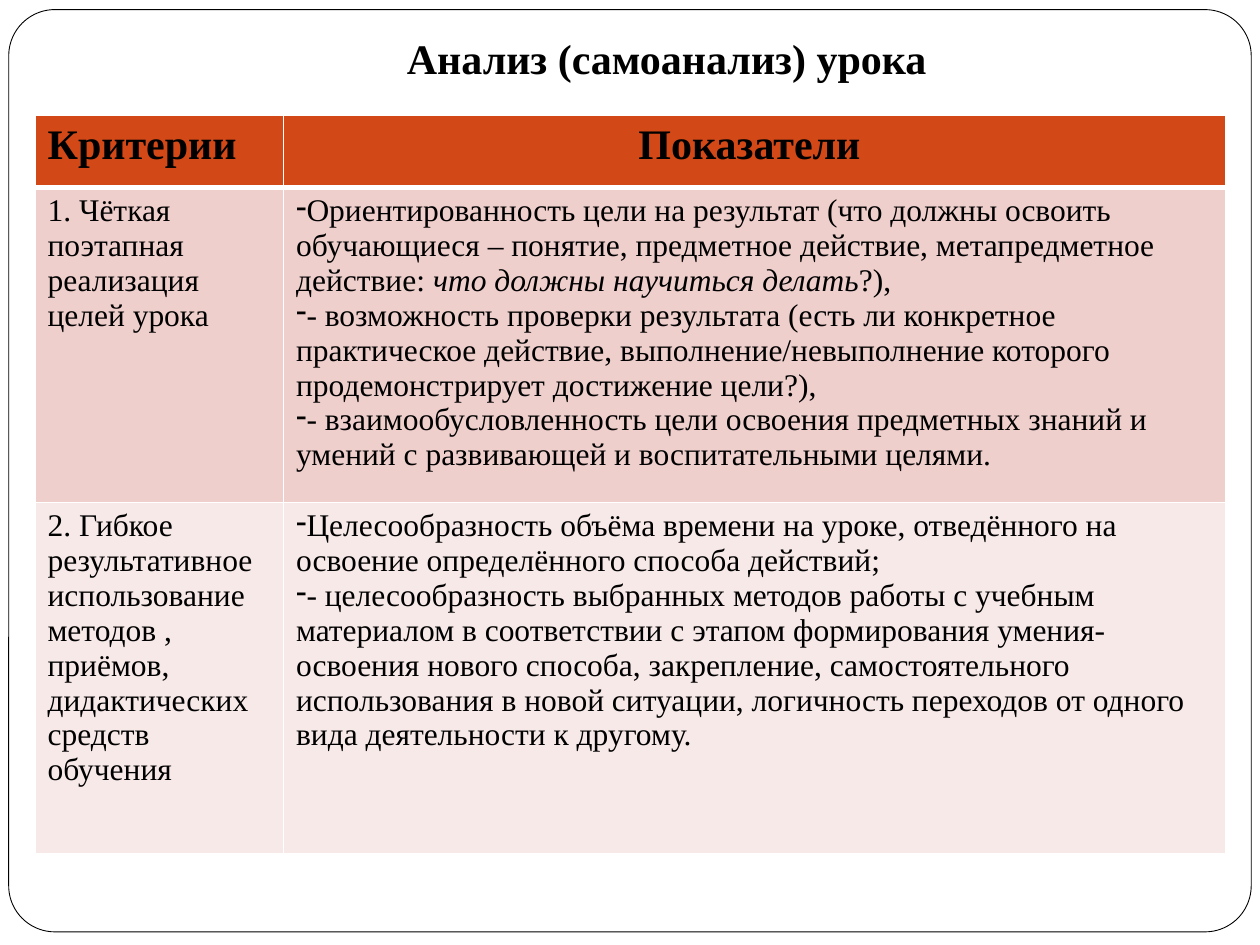
from lxml import etree
from pptx import Presentation
from pptx.dml.color import RGBColor
from pptx.enum.shapes import MSO_SHAPE
from pptx.enum.text import PP_ALIGN
from pptx.oxml.ns import qn
from pptx.util import Pt

ROUNDED = MSO_SHAPE.ROUNDED_RECTANGLE
LEFT, CENTER = PP_ALIGN.LEFT, PP_ALIGN.CENTER

BLACK = RGBColor(0x00, 0x00, 0x00)
WHITE = RGBColor(0xFF, 0xFF, 0xFF)
ORANGE = RGBColor(0xD3, 0x48, 0x17)
ROSE = RGBColor(0xEF, 0xCF, 0xCC)
PALE_ROSE = RGBColor(0xF7, 0xE9, 0xE8)

HEADER = ["Критерии", "Показатели "]
EMPHASIS = "что должны научиться делать"
CRITERIA = [
    ("1. Чёткая поэтапная реализация целей урока", [
        "Ориентированность цели на результат (что должны освоить обучающиеся – "
        "понятие, предметное действие, метапредметное действие: "
        f"{EMPHASIS}?),",
        "- возможность проверки результата (есть ли конкретное практическое действие, "
        "выполнение/невыполнение которого продемонстрирует достижение цели?),",
        "- взаимообусловленность цели освоения предметных знаний и умений "
        "с развивающей и воспитательными целями."]),
    ("2. Гибкое результативное использование методов , приёмов, "
     "дидактических средств обучения", [
        "Целесообразность объёма времени на уроке, отведённого на освоение "
        "определённого способа действий;",
        "- целесообразность выбранных методов работы с учебным материалом "
        "в соответствии с этапом формирования умения- освоения нового способа, "
        "закрепление, самостоятельного использования в новой ситуации, "
        "логичность переходов от одного вида деятельности к другому."]),
]


class SlideBuilder:
    font = "Times New Roman"
    heading_size = 24
    body_size = 18

    def __init__(self, slide):
        self.slide = slide

    def fill_paragraph(self, p, text, heading=False, align=LEFT):
        """Fill a paragraph, setting the emphasised phrase in italics."""
        before, phrase, after = text.partition(EMPHASIS)
        p.alignment = align
        for part in filter(None, (before, phrase, after)):
            r = p.add_run()
            r.text = part
            r.font.name = self.font
            r.font.size = Pt(self.heading_size if heading else self.body_size)
            r.font.bold = heading
            r.font.italic = part == EMPHASIS
            r.font.color.rgb = BLACK

    def dash(self, p):
        pPr = p._p.get_or_add_pPr()
        pPr.set("marL", "0")
        pPr.set("indent", "0")
        etree.SubElement(pPr, qn("a:buChar"), char="-")

    def frame(self, x, y, w, h):
        sp = self.slide.shapes.add_shape(ROUNDED, Pt(x), Pt(y), Pt(w), Pt(h))
        sp.adjustments[0] = 0.05
        sp.shadow.inherit = False
        sp.fill.solid()
        sp.fill.fore_color.rgb = WHITE
        sp.line.color.rgb = BLACK
        sp.line.width = Pt(0.5)

    def title(self, text, x, y, w, h):
        tf = self.slide.shapes.add_textbox(Pt(x), Pt(y), Pt(w), Pt(h)).text_frame
        tf.word_wrap = False
        self.fill_paragraph(tf.paragraphs[0], text, heading=True, align=CENTER)

    def table(self, x, y, widths, heights):
        shape = self.slide.shapes.add_table(
            len(heights), len(widths), Pt(x), Pt(y), Pt(sum(widths)), Pt(sum(heights)))
        table = shape.table
        for column, width in zip(table.columns, widths):
            column.width = Pt(width)
        for row, height in zip(table.rows, heights):
            row.height = Pt(height)
        return table

    def cell(self, cell, texts, fill, bottom=1, dashed=False, **style):
        tf = cell.text_frame
        for i, text in enumerate(texts):
            p = tf.add_paragraph() if i else tf.paragraphs[0]
            self.fill_paragraph(p, text, **style)
            if dashed:
                self.dash(p)
        # Borders must precede the fill in the cell properties
        tcPr = cell._tc.get_or_add_tcPr()
        for side, width in (("L", 1), ("R", 1), ("T", 1), ("B", bottom)):
            ln = etree.SubElement(tcPr, qn(f"a:ln{side}"), w=str(Pt(width)))
            solid = etree.SubElement(ln, qn("a:solidFill"))
            etree.SubElement(solid, qn("a:srgbClr"), val=str(WHITE))
        cell.fill.solid()
        cell.fill.fore_color.rgb = fill


def main():
    prs = Presentation()
    prs.slide_width, prs.slide_height = Pt(720), Pt(540)
    s = SlideBuilder(prs.slides.add_slide(prs.slide_layouts[6]))

    # Frame and title
    s.frame(5, 5.5, 710, 527)
    s.title("Анализ (самоанализ) урока", 212.5, 15, 337, 58)

    # Table header
    table = s.table(20, 66, widths=[142, 538.5], heights=[41, 180, 201])
    for col, (text, align) in enumerate(zip(HEADER, (LEFT, CENTER))):
        s.cell(table.cell(0, col), [text], ORANGE, bottom=3, heading=True, align=align)

    # Criteria with their indicators
    for row, ((criterion, indicators), fill) in enumerate(
            zip(CRITERIA, (ROSE, PALE_ROSE)), start=1):
        s.cell(table.cell(row, 0), [criterion], fill)
        s.cell(table.cell(row, 1), indicators, fill, dashed=True)

    prs.save("out.pptx")


if __name__ == "__main__":
    main()
